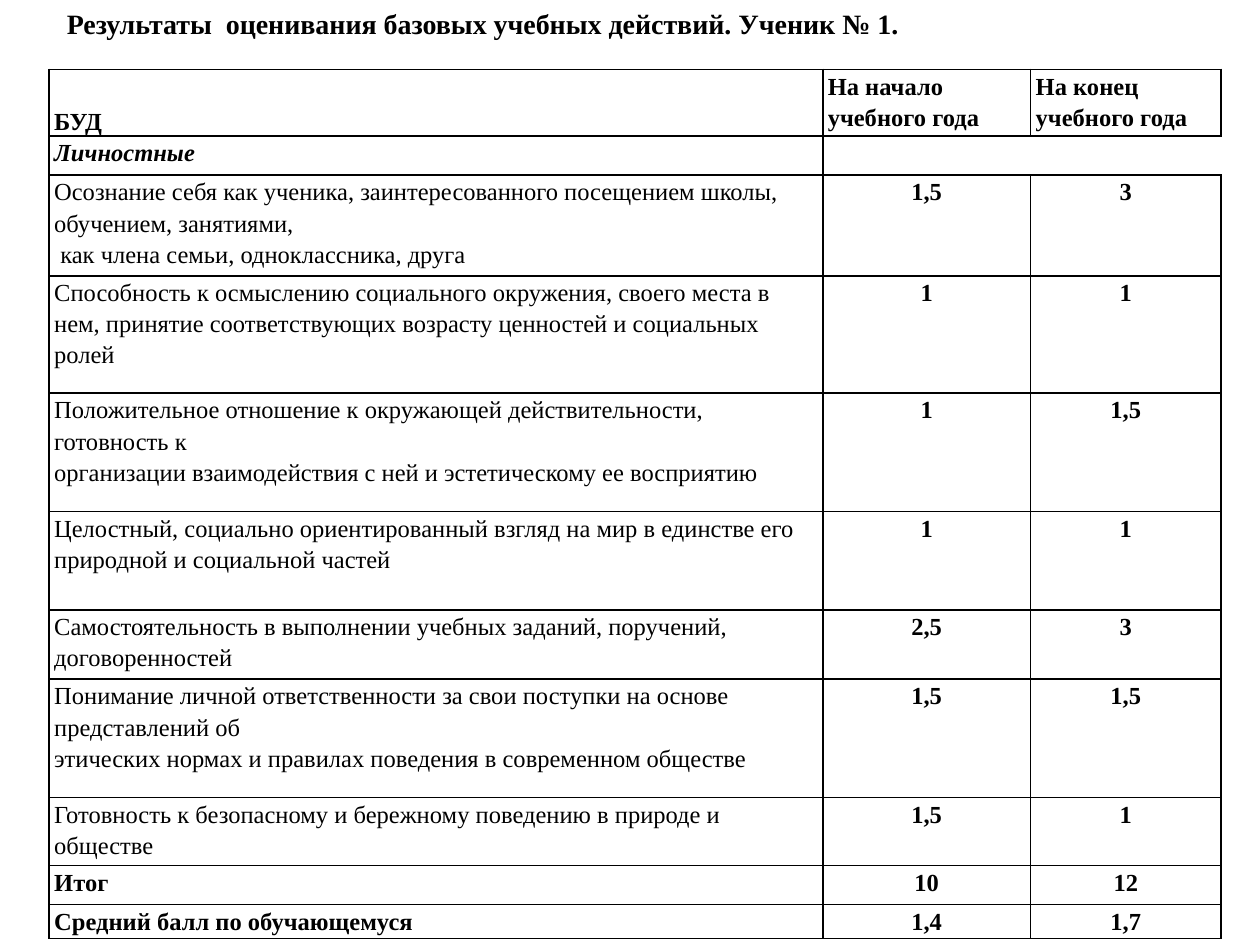
from lxml.etree import SubElement
from pptx import Presentation
from pptx.dml.color import RGBColor
from pptx.enum.text import MSO_ANCHOR, MSO_AUTO_SIZE, PP_ALIGN
from pptx.oxml.ns import qn
from pptx.util import Inches, Pt

COLORS = {"ink": "000000", "paper": "FFFFFF"}
FONT = "Times New Roman"

TITLE = "Результаты  оценивания базовых учебных действий. Ученик № 1."
HEADINGS = ("БУД", "На начало  учебного года", "На конец учебного года")
GROUP = "Личностные"
SKILLS = [
    ("Осознание себя как ученика, заинтересованного посещением школы, "
     "обучением, занятиями,\n как члена семьи, одноклассника, друга", "1,5", "3"),
    ("Способность к осмыслению социального окружения, своего места в нем, "
     "принятие соответствующих возрасту ценностей и социальных ролей", "1", "1"),
    ("Положительное отношение к окружающей действительности, готовность к\n"
     "организации взаимодействия с ней и эстетическому ее восприятию", "1", "1,5"),
    ("Целостный, социально ориентированный взгляд на мир в единстве его "
     "природной и социальной частей", "1", "1"),
    ("Самостоятельность в выполнении учебных заданий, поручений, "
     "договоренностей", "2,5", "3"),
    ("Понимание личной ответственности за свои поступки на основе "
     "представлений об\nэтических нормах и правилах поведения в современном "
     "обществе", "1,5", "1,5"),
    ("Готовность к безопасному и бережному поведению в природе и обществе",
     "1,5", "1"),
]
TOTALS = [("Итог", "10", "12"), ("Средний балл по обучающемуся", "1,4", "1,7")]

COLUMN_WIDTHS = (6.14, 1.65, 1.51)
ROW_HEIGHTS = (0.53, 0.31, 0.8, 0.93, 0.94, 0.78, 0.55, 0.94, 0.54, 0.31, 0.27)


def write_text(frame, text, size=14, bold=False, italic=False,
               align=PP_ALIGN.LEFT, spacing=1.15):
    """Fill a text frame; each line of text becomes a paragraph."""
    frame.text = text
    for paragraph in frame.paragraphs:
        paragraph.alignment = align
        paragraph.line_spacing = spacing
        for run in paragraph.runs:
            run.font.name = FONT
            run.font.size = Pt(size)
            run.font.bold = bold
            run.font.italic = italic
            run.font.color.rgb = RGBColor.from_string(COLORS["ink"])


def draw_borders(cell, open_sides=""):
    properties = cell._tc.get_or_add_tcPr()
    for side in "LRTB":
        line = SubElement(properties, qn(f"a:ln{side}"), w=str(Pt(1)))
        if side in open_sides:
            SubElement(line, qn("a:noFill"))
        else:
            fill = SubElement(line, qn("a:solidFill"))
            SubElement(fill, qn("a:srgbClr"), val=COLORS["ink"])


def format_cell(cell, open_sides=""):
    cell.margin_left = cell.margin_right = Inches(0.04)
    cell.margin_top = cell.margin_bottom = 0
    draw_borders(cell, open_sides)
    cell.fill.solid()
    cell.fill.fore_color.rgb = RGBColor.from_string(COLORS["paper"])


def add_title(slide):
    title = slide.shapes.title
    title.left, title.top = Inches(0.53), Inches(0)
    title.width, title.height = Inches(6.8), Inches(0.37)
    frame = title.text_frame
    frame.margin_left = frame.margin_right = 0
    frame.margin_top = frame.margin_bottom = 0
    frame.word_wrap = False
    frame.auto_size = MSO_AUTO_SIZE.NONE
    frame.vertical_anchor = MSO_ANCHOR.MIDDLE
    write_text(frame, TITLE, size=16, bold=True, spacing=1.0)


def add_scores(slide):
    scores = slide.shapes.add_table(
        len(ROW_HEIGHTS), len(COLUMN_WIDTHS), Inches(0.39), Inches(0.55),
        Inches(sum(COLUMN_WIDTHS)), Inches(sum(ROW_HEIGHTS))).table
    scores.first_row = scores.horz_banding = False
    for column, width in zip(scores.columns, COLUMN_WIDTHS):
        column.width = Inches(width)
    for row, height in zip(scores.rows, ROW_HEIGHTS):
        row.height = Inches(height)

    # Group row: the two score columns are joined and open on the right
    scores.cell(1, 1).merge(scores.cell(1, 2))
    for r, row in enumerate(scores.rows):
        for c, cell in enumerate(row.cells):
            format_cell(cell, open_sides="R" if r == 1 and c > 0 else "")

    # Headings and group name
    for c, heading in enumerate(HEADINGS):
        write_text(scores.cell(0, c).text_frame, heading, bold=True)
    scores.cell(0, 0).vertical_anchor = MSO_ANCHOR.BOTTOM
    write_text(scores.cell(1, 0).text_frame, GROUP, bold=True, italic=True)

    # Skills and totals
    for r, (label, *marks) in enumerate(SKILLS + TOTALS, start=2):
        is_total = r >= 2 + len(SKILLS)
        write_text(scores.cell(r, 0).text_frame, label, bold=is_total)
        for c, mark in enumerate(marks, start=1):
            write_text(scores.cell(r, c).text_frame, mark, bold=True,
                       align=PP_ALIGN.CENTER)


def main():
    deck = Presentation()
    deck.slide_width, deck.slide_height = Inches(10), Inches(7.5)
    slide = deck.slides.add_slide(deck.slide_layouts[5])
    add_scores(slide)
    add_title(slide)
    deck.save("out.pptx")


if __name__ == "__main__":
    main()
